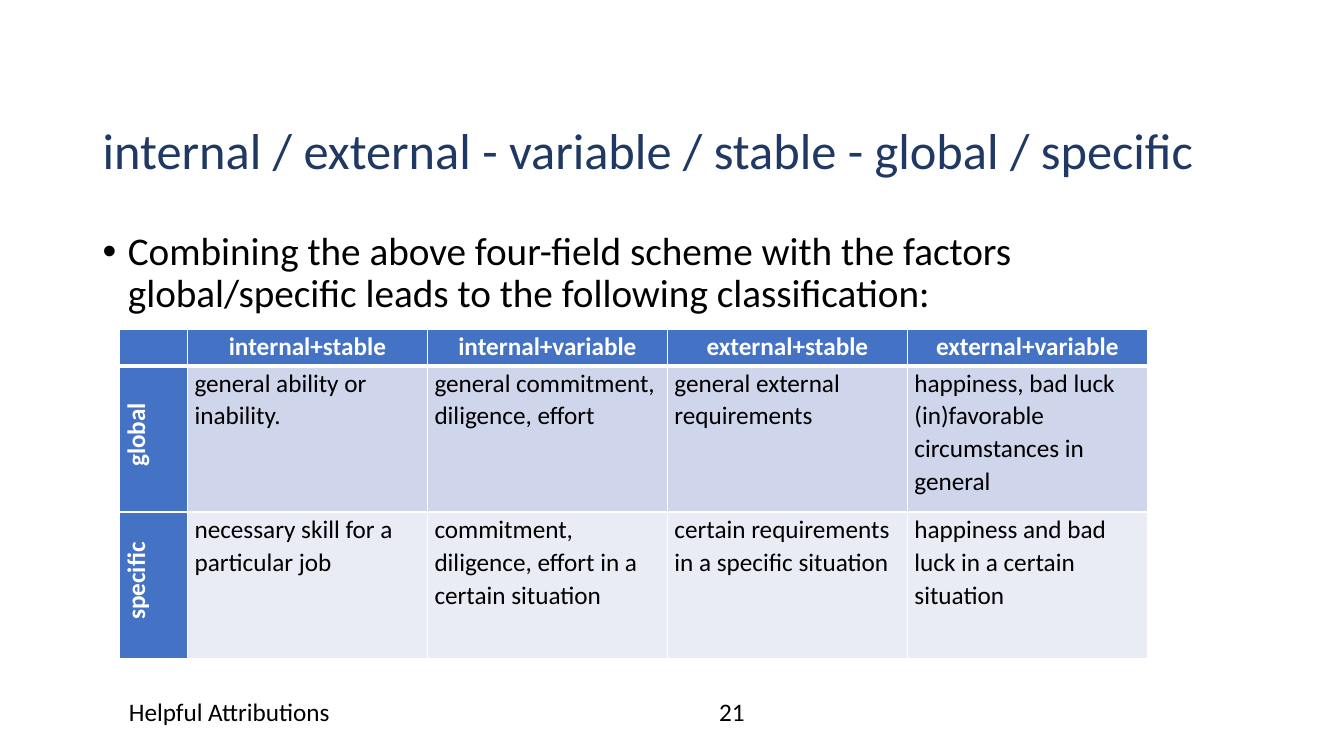
from dataclasses import dataclass

from lxml.etree import SubElement
from pptx import Presentation
from pptx.dml.color import RGBColor
from pptx.enum.text import PP_ALIGN
from pptx.oxml.ns import qn
from pptx.slide import Slide
from pptx.table import _Cell
from pptx.util import Inches, Pt


@dataclass(frozen=True)
class Theme:
    font: str = "Calibri"
    title_color: str = "203864"
    text_color: str = "000000"
    white: str = "FFFFFF"
    header_fill: str = "4472C4"
    title_size: int = 36
    body_size: int = 28
    small_size: int = 18


@dataclass(frozen=True)
class TextBlock:
    text: str
    left: float
    top: float
    width: float
    height: float
    size: int
    color: str
    align: PP_ALIGN = PP_ALIGN.LEFT
    line_spacing: float = 1.0
    bullet: bool = False


@dataclass(frozen=True)
class ScopeRow:
    label: str
    fill: str
    entries: tuple[str, ...]


THEME = Theme()

TEXT_BLOCKS = (
    TextBlock("internal / external - variable / stable - global / specific",
              0.92, 1.2, 11.5, 0.97, THEME.title_size, THEME.title_color, line_spacing=0.9),
    TextBlock("Combining the above four-field scheme with the factors "
              "global/specific leads to the following classification:",
              0.92, 2.25, 11.5, 1.0, THEME.body_size, THEME.text_color,
              line_spacing=0.9, bullet=True),
    TextBlock("Helpful Attributions", 1.18, 6.86, 4.5, 0.4, THEME.small_size, THEME.text_color),
    TextBlock("21", 5.76, 6.86, 3, 0.4, THEME.small_size, THEME.text_color, PP_ALIGN.CENTER),
)

HEADERS = ("", "internal+stable", "internal+variable", "external+stable", "external+variable")
SCOPE_ROWS = (
    ScopeRow("global", "CFD5EA", (
        "general ability or inability.",
        "general commitment, diligence, effort",
        "general external requirements",
        "happiness, bad luck (in)favorable circumstances in general")),
    ScopeRow("specific", "E9EBF5", (
        "necessary skill for a particular job",
        "commitment, diligence, effort in a certain situation",
        "certain requirements in a specific situation",
        "happiness and bad luck in a certain situation")),
)
COLUMN_WIDTHS = (0.68,) + (2.38,) * 4
ROW_HEIGHTS = (0.36, 1.45, 1.45)


def style_font(paragraph, size: int, color: str, bold: bool = False) -> None:
    font = paragraph.font
    font.name, font.size, font.bold = THEME.font, Pt(size), bold
    font.color.rgb = RGBColor.from_string(color)


def add_text(slide: Slide, block: TextBlock) -> None:
    shape = slide.shapes.add_textbox(Inches(block.left), Inches(block.top),
                                     Inches(block.width), Inches(block.height))
    shape.text_frame.word_wrap = True
    paragraph = shape.text_frame.paragraphs[0]
    paragraph.text = block.text
    paragraph.alignment = block.align
    paragraph.line_spacing = block.line_spacing
    if block.bullet:
        properties = paragraph._p.get_or_add_pPr()
        properties.set("marL", str(Inches(0.25)))
        properties.set("indent", str(-Inches(0.25)))
        SubElement(properties, qn("a:buFont"), typeface="Arial")
        SubElement(properties, qn("a:buChar"), char="•")
    style_font(paragraph, block.size, block.color)


def set_borders(cell: _Cell, top: float, bottom: float) -> None:
    properties = cell._tc.get_or_add_tcPr()
    for side, width in (("L", 1), ("R", 1), ("T", top), ("B", bottom)):
        line = SubElement(properties, qn(f"a:ln{side}"), w=str(Pt(width)))
        fill = SubElement(line, qn("a:solidFill"))
        SubElement(fill, qn("a:srgbClr"), val=THEME.white)


def fill_cell(cell: _Cell, text: str, fill: str, heading: bool) -> None:
    cell.margin_left = cell.margin_right = Inches(0.07)
    cell.margin_top = cell.margin_bottom = 0
    cell.fill.solid()
    cell.fill.fore_color.rgb = RGBColor.from_string(fill)
    paragraph = cell.text_frame.paragraphs[0]
    paragraph.text = text
    paragraph.alignment = PP_ALIGN.CENTER if heading else PP_ALIGN.LEFT
    paragraph.line_spacing = 1.07
    style_font(paragraph, THEME.small_size,
               THEME.white if heading else THEME.text_color, heading)


def add_classification(slide: Slide) -> None:
    frame = slide.shapes.add_table(len(ROW_HEIGHTS), len(COLUMN_WIDTHS),
                                   Inches(1.18), Inches(3.27),
                                   Inches(sum(COLUMN_WIDTHS)), Inches(sum(ROW_HEIGHTS)))
    table = frame.table
    table.horz_banding = False
    for column, width in zip(table.columns, COLUMN_WIDTHS):
        column.width = Inches(width)
    for row, height in zip(table.rows, ROW_HEIGHTS):
        row.height = Inches(height)

    rows = (ScopeRow("", THEME.header_fill, HEADERS[1:]),) + SCOPE_ROWS
    for row_index, scope in enumerate(rows):
        for column_index, text in enumerate((scope.label,) + scope.entries):
            cell = table.cell(row_index, column_index)
            heading = row_index == 0 or column_index == 0
            # Heavier rule between the header and the first scope row
            set_borders(cell, top=3 if row_index == 1 else 1,
                        bottom=3 if row_index == 0 else 1)
            fill_cell(cell, text, THEME.header_fill if heading else scope.fill, heading)
            # Scope labels read upwards
            if column_index == 0 and row_index > 0:
                cell._tc.get_or_add_tcPr().set("vert", "vert270")
                label = cell.text_frame.paragraphs[0]
                label._p.get_or_add_pPr().set("marL", str(Inches(0.08)))


def main() -> None:
    presentation = Presentation()
    presentation.slide_width = Inches(13.33)
    presentation.slide_height = Inches(7.5)
    slide = presentation.slides.add_slide(presentation.slide_layouts[6])

    # Title, bullet and footer
    for block in TEXT_BLOCKS:
        add_text(slide, block)

    # Classification table
    add_classification(slide)
    presentation.save("out.pptx")


if __name__ == "__main__":
    main()
